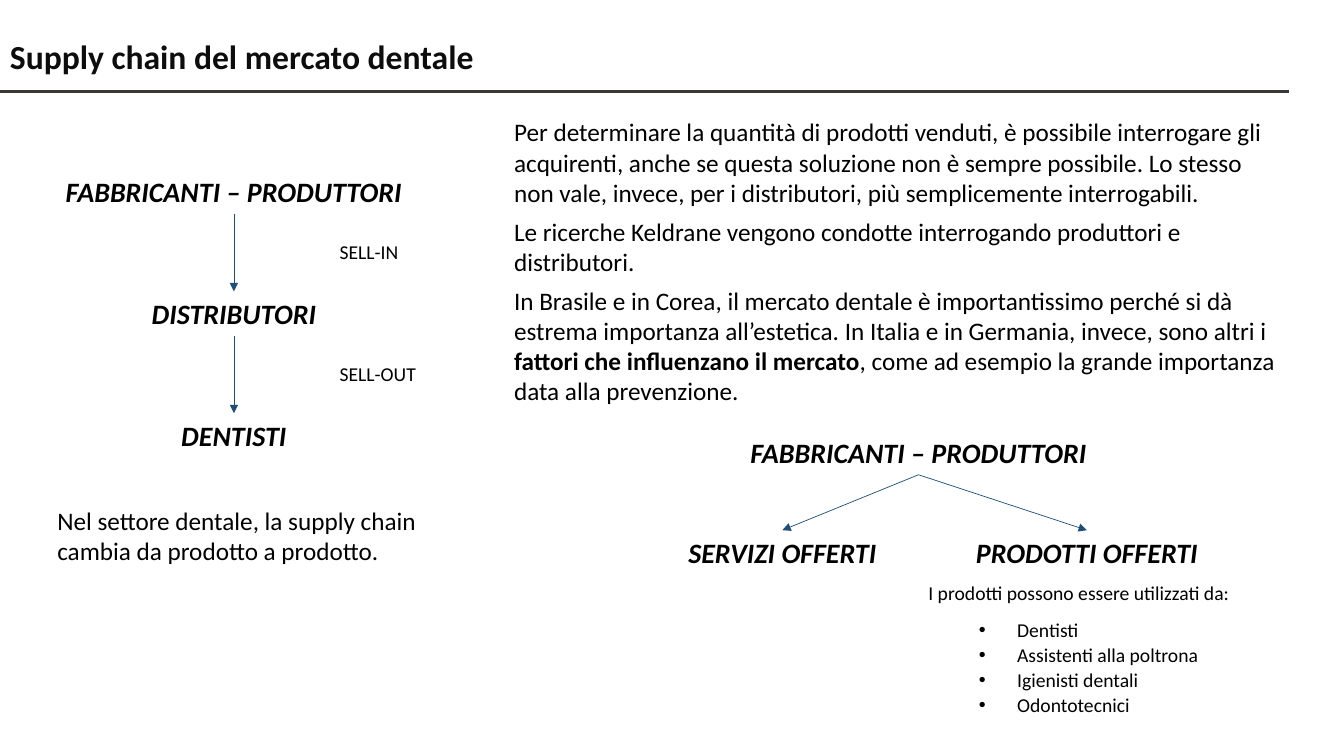
from lxml.etree import SubElement
from pptx import Presentation
from pptx.dml.color import RGBColor
from pptx.enum.shapes import MSO_CONNECTOR
from pptx.enum.text import MSO_ANCHOR, PP_ALIGN
from pptx.oxml.ns import qn
from pptx.util import Inches, Pt

BLACK = RGBColor(0x00, 0x00, 0x00)
TITLE_COLOR = RGBColor(0x0D, 0x0D, 0x0D)
RULE_COLOR = RGBColor(0x3B, 0x38, 0x38)
ARROW_COLOR = RGBColor(0x1F, 0x4E, 0x79)

TITLE = "Supply chain del mercato dentale"
CHAIN = ["FABBRICANTI – PRODUTTORI", "DISTRIBUTORI", "DENTISTI"]
SALES = [("SELL-IN", 0.89), ("SELL-OUT", 1.13)]  # label, width
CHAIN_NOTE = ["Nel settore dentale, la supply chain cambia da prodotto a prodotto."]
BOLD_PHRASE = "fattori che influenzano il mercato"
MARKET = [
    "Per determinare la quantità di prodotti venduti, è possibile interrogare gli "
    "acquirenti, anche se questa soluzione non è sempre possibile. Lo stesso non vale, "
    "invece, per i distributori, più semplicemente interrogabili.",
    "Le ricerche Keldrane vengono condotte interrogando produttori e distributori.",
    "In Brasile e in Corea, il mercato dentale è importantissimo perché si dà estrema "
    "importanza all’estetica. In Italia e in Germania, invece, sono altri i "
    f"{BOLD_PHRASE}, come ad esempio la grande importanza data alla prevenzione.",
]
OFFER_ROOT = ("FABBRICANTI – PRODUTTORI", 7.03)  # heading, left
OFFERS = [("SERVIZI OFFERTI", 5.68), ("PRODOTTI OFFERTI", 8.7)]
USERS_INTRO = "I prodotti possono essere utilizzati da:"
USERS = ["Dentisti", "Assistenti alla poltrona", "Igienisti dentali", "Odontotecnici"]

HEADING_WIDTH, HEADING_HEIGHT = 4.16, 0.44
CHAIN_LEFT, CHAIN_TOP, CHAIN_STEP = 0.24, 1.68, 1.21
SALES_LEFT, SALES_HEIGHT = 3.27, 0.34
ROOT_TOP, OFFERS_TOP = 4.27, 5.26


def add_text(slide, box, lines, size, color=BLACK, bold=False, italic=False,
             align=PP_ALIGN.LEFT, space_after=6):
    """Add a wrapped text box, with BOLD_PHRASE emphasised wherever it occurs."""
    text_frame = slide.shapes.add_textbox(*map(Inches, box)).text_frame
    text_frame.word_wrap = True
    for index, line in enumerate(lines):
        paragraph = text_frame.paragraphs[0] if index == 0 else text_frame.add_paragraph()
        paragraph.alignment = align
        paragraph.space_after = Pt(space_after)
        before, phrase, after = line.partition(BOLD_PHRASE)
        for part in filter(None, (before, phrase, after)):
            run = paragraph.add_run()
            run.text = part
            run.font.name = "Calibri"
            run.font.size = Pt(size)
            run.font.color.rgb = color
            run.font.bold = bold or part == BOLD_PHRASE
            run.font.italic = italic
    return text_frame


def add_heading(slide, text, left, top):
    add_text(slide, (left, top, HEADING_WIDTH, HEADING_HEIGHT), [text], 20,
             bold=True, italic=True, align=PP_ALIGN.CENTER)


def add_line(slide, start, end, color, width, arrow=False):
    line = slide.shapes.add_connector(MSO_CONNECTOR.STRAIGHT, *map(Inches, start + end))
    line.line.color.rgb = color
    line.line.width = Pt(width)
    properties = line._element.spPr
    if arrow:
        SubElement(properties.find(qn("a:ln")), qn("a:tailEnd"), type="triangle")
    SubElement(properties, qn("a:effectLst"))


def link_headings(slide, upper, lower):
    """Draw an arrow from the bottom of one heading to the top of another."""
    start = (upper[0] + HEADING_WIDTH / 2, upper[1] + HEADING_HEIGHT)
    end = (lower[0] + HEADING_WIDTH / 2, lower[1])
    add_line(slide, start, end, ARROW_COLOR, 0.5, arrow=True)


def add_bullet(paragraph):
    properties = paragraph._p.get_or_add_pPr()
    properties.set("marL", str(Inches(0.88)))
    properties.set("indent", str(Inches(-0.38)))
    SubElement(properties, qn("a:buFont"), typeface="Arial")
    SubElement(properties, qn("a:buChar"), char="•")


def add_title(slide):
    add_line(slide, (0, 0.91), (12.78, 0.91), RULE_COLOR, 2.25)
    text_frame = add_text(slide, (0, 0.23, 12.77, 0.7), [TITLE], 24, TITLE_COLOR,
                          bold=True, space_after=0)
    text_frame.vertical_anchor = MSO_ANCHOR.MIDDLE
    text_frame.paragraphs[0].line_spacing = 0.9


def add_chain(slide):
    tops = [CHAIN_TOP + CHAIN_STEP * index for index in range(len(CHAIN))]
    for text, top in zip(CHAIN, tops):
        add_heading(slide, text, CHAIN_LEFT, top)
    for (label, width), top, next_top in zip(SALES, tops, tops[1:]):
        link_headings(slide, (CHAIN_LEFT, top), (CHAIN_LEFT, next_top))
        label_top = (top + HEADING_HEIGHT + next_top - SALES_HEIGHT) / 2
        add_text(slide, (SALES_LEFT, label_top, width, SALES_HEIGHT), [label], 14)


def add_offers(slide):
    root_text, root_left = OFFER_ROOT
    add_heading(slide, root_text, root_left, ROOT_TOP)
    for text, left in OFFERS:
        add_heading(slide, text, left, OFFERS_TOP)
        link_headings(slide, (root_left, ROOT_TOP), (left, OFFERS_TOP))


def add_users(slide):
    box = (9.11, OFFERS_TOP + HEADING_HEIGHT, 3.63, 1.46)
    paragraphs = add_text(slide, box, [USERS_INTRO] + USERS, 14, space_after=0).paragraphs
    for paragraph in paragraphs:
        paragraph.line_spacing = 1.07
    for paragraph in (paragraphs[0], paragraphs[-1]):
        paragraph.space_after = Pt(8)
    for paragraph in paragraphs[1:]:
        add_bullet(paragraph)


def main():
    presentation = Presentation()
    presentation.slide_width = Inches(13.33)
    presentation.slide_height = Inches(7.5)
    slide = presentation.slides.add_slide(presentation.slide_layouts[6])
    add_title(slide)
    add_chain(slide)
    add_text(slide, (5, 1.11, 7.78, 3), MARKET, 18)
    add_text(slide, (0.47, 4.96, 4.16, 0.7), CHAIN_NOTE, 18)
    add_offers(slide)
    add_users(slide)
    presentation.save("out.pptx")


if __name__ == "__main__":
    main()
